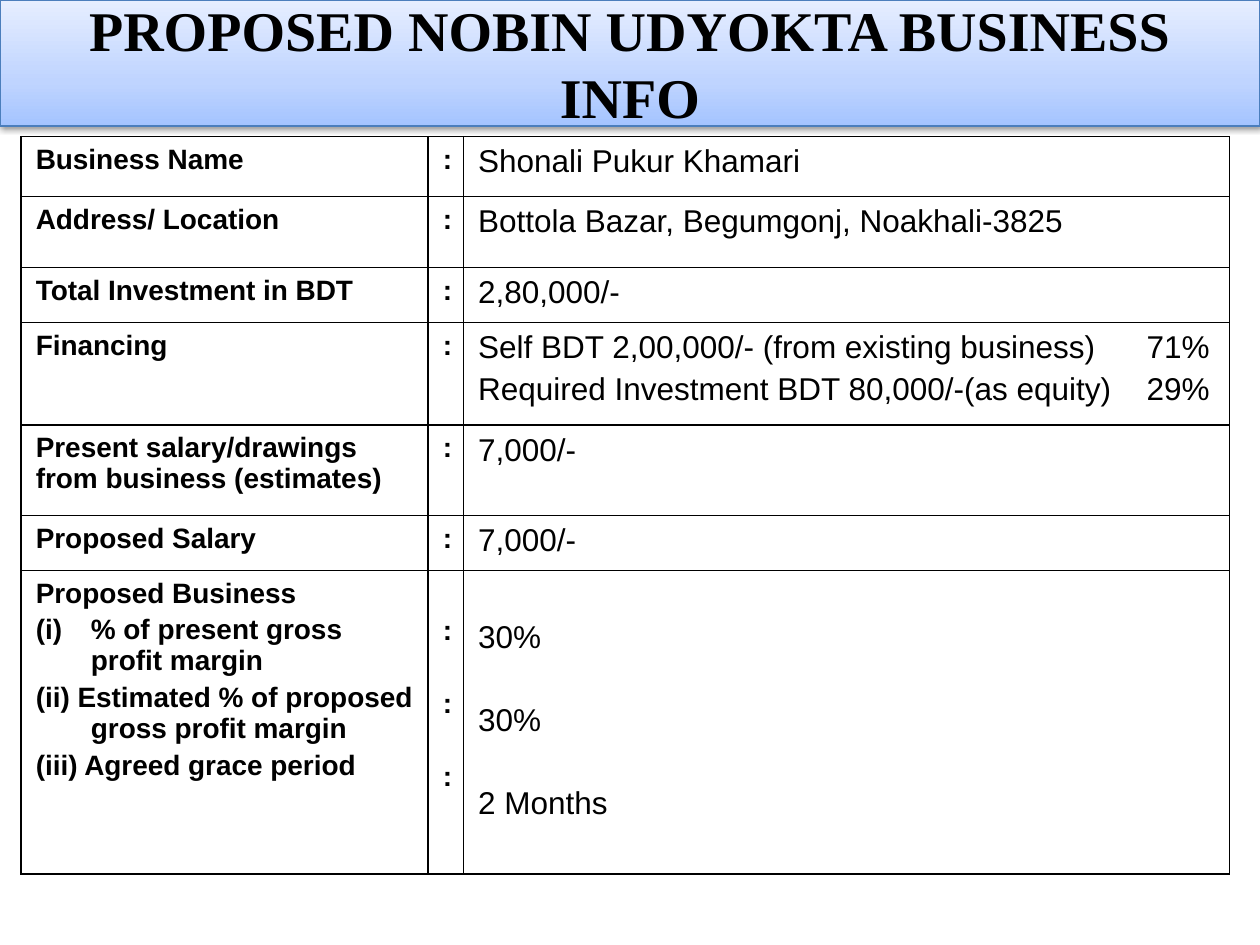
from pptx import Presentation
from pptx.util import Pt
from pptx.dml.color import RGBColor
from pptx.enum.shapes import MSO_SHAPE as Shape
from pptx.enum.text import MSO_ANCHOR as Anchor, PP_ALIGN as Align
from pptx.oxml import parse_xml
from pptx.oxml.ns import nsdecls

BLACK = RGBColor(0x00, 0x00, 0x00)
EDGE = RGBColor(0x4B, 0x7E, 0xBC)
STOPS = [(0, RGBColor(0xA4, 0xC4, 0xFF)), (35, RGBColor(0xBF, 0xD4, 0xFF)),
         (100, RGBColor(0xE6, 0xEE, 0xFF))]
NS = nsdecls("a")

COLS = [232.6, 20.2, 437.9]
TALL = [34.3, 40.6, 31.4, 58.6, 51.7, 31.4, 173.4]
SIZES = [16, 16, 18]
GAPS = [3.2, 23.8, 3.6]
ROWS = [
    (["Business Name"], [":"], ["Shonali Pukur Khamari"]),
    (["Address/ Location"], [":"], ["Bottola Bazar, Begumgonj, Noakhali-3825"]),
    (["Total Investment in BDT"], [":"], ["2,80,000/-"]),
    (["Financing"], [":"],
     ["Self BDT 2,00,000/- (from existing business)\t71%",
      "Required Investment BDT 80,000/-(as equity)\t29%"]),
    (["Present salary/drawings from business (estimates)"], [":"], ["7,000/-"]),
    (["Proposed Salary"], [":"], ["7,000/-"]),
    (["Proposed Business", "% of present gross profit margin",
      "(ii) Estimated % of proposed gross profit margin",
      "(iii) Agreed grace period"],
     [":"] * 3, ["30%", "30%", "2 Months"]),
]
LAST = len(ROWS) - 1
DROPS = [0, 21.4, 24.2]  # lowers the last row's answers beside their items


def add_text(para, text, size, bold, face="Arial"):
    run = para.add_run()
    run.text = text
    font = run.font
    font.name, font.size, font.bold = face, Pt(size), bold
    font.color.rgb = BLACK


def add_lines(cell):
    """Draw a thin black border on all four sides of a cell."""
    props = cell._tc.get_or_add_tcPr()
    for side in "LRTB":
        props.append(parse_xml(
            f'<a:ln{side} {NS} w="{Pt(1)}"><a:solidFill>'
            f'<a:srgbClr val="{BLACK}"/></a:solidFill></a:ln{side}>'))


deck = Presentation()
deck.slide_width, deck.slide_height = Pt(720), Pt(540)
slide = deck.slides.add_slide(deck.slide_layouts[6])

# Title band
band = slide.shapes.add_shape(Shape.RECTANGLE, 0, 0, Pt(720), Pt(72))
band.line.color.rgb = EDGE
band.line.width = Pt(0.75)
stops = "".join(f'<a:gs pos="{pos * 1000}"><a:srgbClr val="{tint}"/></a:gs>'
                for pos, tint in STOPS)
band._element.spPr.find("{*}prstGeom").addnext(parse_xml(
    f'<a:gradFill {NS} rotWithShape="1"><a:gsLst>{stops}</a:gsLst>'
    '<a:lin ang="16200000" scaled="0"/></a:gradFill>'))
band._element.spPr.append(parse_xml(
    f'<a:effectLst {NS}><a:outerShdw blurRad="{Pt(3.1)}" dist="{Pt(1.6)}" '
    f'dir="5400000" rotWithShape="0"><a:srgbClr val="{BLACK}">'
    '<a:alpha val="38000"/></a:srgbClr></a:outerShdw></a:effectLst>'))
frame = band.text_frame
frame.word_wrap = True
frame.vertical_anchor = Anchor.MIDDLE
frame.margin_top = frame.margin_bottom = 0
para = frame.paragraphs[0]
para.alignment = Align.CENTER
add_text(para, "PROPOSED NOBIN UDYOKTA BUSINESS INFO", 32, True, "Times New Roman")

# Business table
table = slide.shapes.add_table(len(ROWS), len(COLS), Pt(12), Pt(78),
                               Pt(sum(COLS)), Pt(sum(TALL))).table
table.first_row = table.horz_banding = False
for col, width in zip(table.columns, COLS):
    col.width = Pt(width)
for row, height in zip(table.rows, TALL):
    row.height = Pt(height)

for r, row in enumerate(ROWS):
    for c, texts in enumerate(row):
        cell = table.cell(r, c)
        add_lines(cell)
        cell.fill.background()
        cell.margin_left = cell.margin_right = Pt(8.5)
        cell.margin_bottom = Pt(4.3)
        cell.margin_top = Pt(4.3 + (DROPS[c] if r == LAST else 0))
        gap = 27.3 if r == LAST and c == 2 else GAPS[c]
        for i, text in enumerate(texts):
            para = cell.text_frame.paragraphs[0] if i == 0 else cell.text_frame.add_paragraph()
            props = para._p.get_or_add_pPr()
            if i:
                para.space_before = Pt(gap)
            if i and c == 0:
                props.set("marL", str(Pt(31.5)))
                props.set("indent", str(-Pt(31.5)))
                if i == 1:
                    props.append(parse_xml(f'<a:buFont {NS} typeface="+mj-lt"/>'))
                    props.append(parse_xml(f'<a:buAutoNum {NS} type="romanLcParenBoth"/>'))
            if "\t" in text:
                props.append(parse_xml(
                    f'<a:tabLst {NS}><a:tab pos="{Pt(382)}" algn="l"/></a:tabLst>'))
            add_text(para, text, SIZES[c], c < 2)

deck.save("out.pptx")
